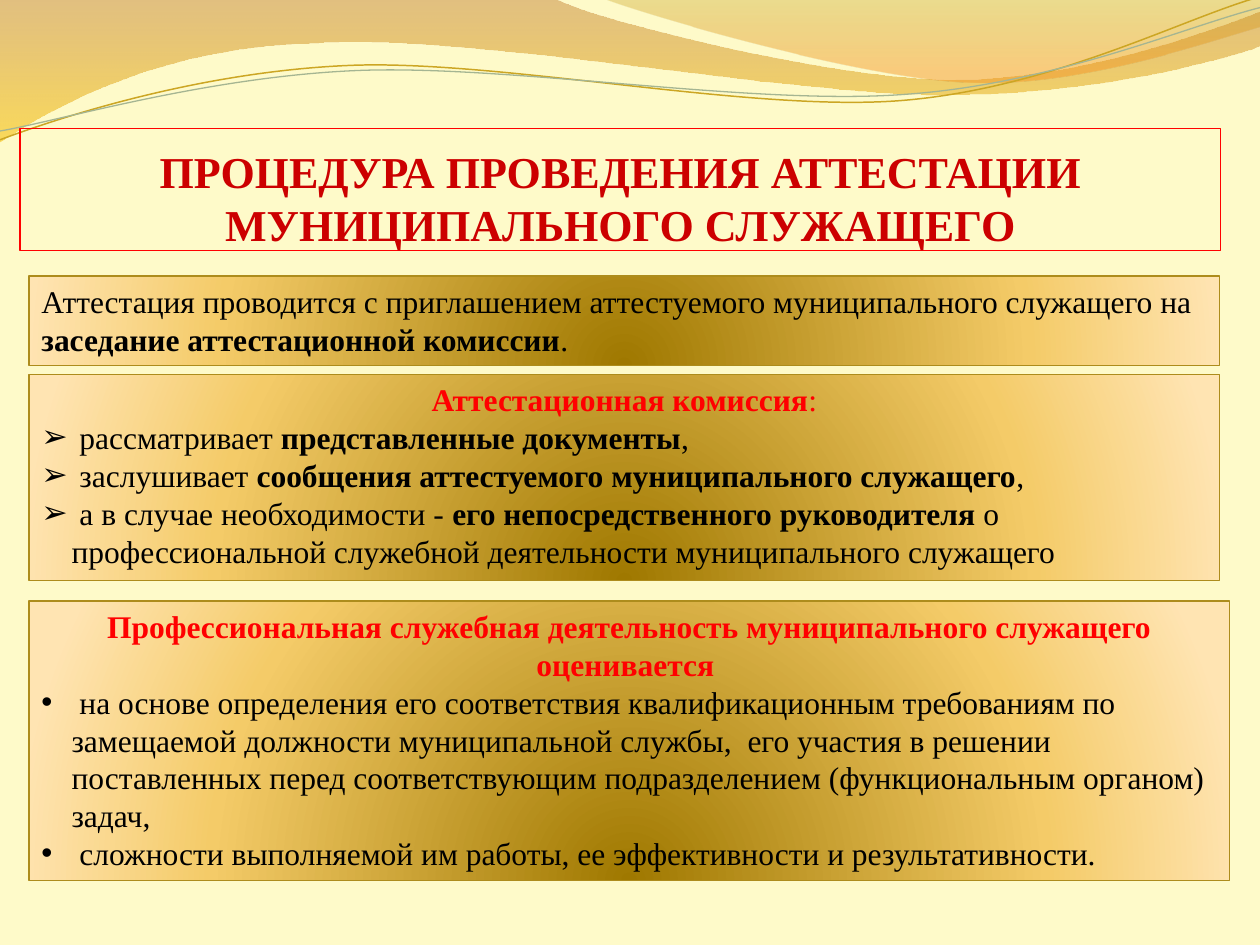
from math import cos, radians, sin

from lxml import etree
from pptx import Presentation
from pptx.dml.color import RGBColor
from pptx.enum.shapes import MSO_SHAPE as Preset
from pptx.enum.text import MSO_ANCHOR as Anchor, PP_ALIGN as Align
from pptx.oxml import parse_xml
from pptx.oxml.ns import nsdecls, qn
from pptx.util import Inches, Pt

COLORS = {
    "background": "FEFAC9", "title": "CC0000", "title_line": "FF0000",
    "heading": "FF0000", "text": "000000", "panel_line": "AD8C1C",
    "gold_line": "CCA624", "green_line": "A5B592",
}
# Gradient stops: position %, colour, opacity %
PANEL_STOPS = [(0, "9F7800", 100), (68, "F4CB68", 100), (100, "FFE4B2", 100)]
PANEL_PATH = ('<a:path path="circle"><a:fillToRect l="50000" t="130000" '
              'r="50000" b="-30000"/></a:path>')
DOWNWARD = '<a:lin ang="5400000" scaled="0"/>'
LINE_ROTATION = 357.3

# A wave is a frame, then a start point followed by segments:
# two numbers for a straight line, six for a cubic curve.
WAVE_FILLS = [
    ((-0.01, -0.01, 10.02, 1.14),
     [(0, 0), (4.4, -0.01), (4.76, 0.17, 6.64, 0.63, 7.58, 0.63),
      (8.53, 0.63, 9.58, 0.26, 10, 0.09), (10.01, 0.36),
      (9.83, 0.44, 8.7, 0.76, 7.46, 0.75), (6.22, 0.75, 3.82, 0.28, 2.57, 0.34),
      (1.29, 0.36, 0.46, 0.83, -0.01, 1.13), (0, 0)],
     [(0, "C07A28", 45), (100, "F7BF00", 55)]),
    ((4.79, -0.01, 5.21, 0.7),
     [(4.79, -0.01), (5.09, 0.11, 6.82, 0.62, 7.69, 0.65),
      (8.56, 0.69, 9.61, 0.32, 10, 0.21), (10, 0), (4.79, -0.01)],
     [(0, "C09709", 30), (80, "F59320", 45)]),
]
WAVE_LINES = [
    ((-0.02, 0.22, 10.02, 0.71),
     [(0, 1.11), (0.48, 0.93, 1.58, 0.57, 2.77, 0.52),
      (3.95, 0.47, 5.93, 0.89, 7.13, 0.8), (8.33, 0.71, 9.38, 0.15, 9.98, -0.02)],
     "gold_line", 0.85),
    ((-0.02, 0.3, 10.03, 0.58),
     [(0, 1.04), (0.47, 0.96, 1.64, 0.61, 2.83, 0.56),
      (4.03, 0.51, 5.97, 0.84, 7.17, 0.75), (8.36, 0.67, 9.41, 0.21, 10, 0.06)],
     "green_line", 0.75),
]

# Paragraph: bullet (None for plain text, "" for a heading), then runs;
# every second run is bold.
PANELS = [
    ((0.23, 2.19, 9.45, 0.71), [
        (None, ["Аттестация проводится с приглашением аттестуемого муниципального служащего на ",
                "заседание аттестационной комиссии", "."]),
    ]),
    ((0.23, 2.97, 9.45, 1.64), [
        ("", ["", "Аттестационная комиссия", ":"]),
        ("➢", [" рассматривает ", "представленные документы", ","]),
        ("➢", [" заслушивает ", "сообщения аттестуемого муниципального служащего", ","]),
        ("➢", [" а в случае необходимости - ", "его непосредственного руководителя",
               " о профессиональной служебной деятельности муниципального служащего"]),
    ]),
    ((0.23, 4.77, 9.53, 2.22), [
        ("", ["", "Профессиональная служебная деятельность муниципального служащего оценивается "]),
        ("•", [" на основе определения его соответствия квалификационным требованиям по "
               "замещаемой должности муниципальной службы,  его участия в решении поставленных "
               "перед соответствующим подразделением (функциональным органом) задач,"]),
        ("•", [" сложности выполняемой им работы, ее эффективности и результативности."]),
    ]),
]


def rgb(name):
    return RGBColor.from_string(COLORS[name])


def set_all(target, values):
    for name, value in values.items():
        setattr(target, name, value)


def to_frame(x, y, frame, rotation):
    """Turn a slide point into an offset within an unrotated frame."""
    left, top, width, height = frame
    dx, dy = x - left - width / 2, y - top - height / 2
    angle = radians(-rotation)
    return (width / 2 + dx * cos(angle) - dy * sin(angle),
            height / 2 + dx * sin(angle) + dy * cos(angle))


class SlideBuilder:
    """Holds the text style and the slide being filled."""

    font_name = "Times New Roman"
    body_size = 18
    bullet_indent = Inches(0.24)

    def __init__(self, slide):
        self.slide = slide
        slide.background.fill.solid()
        slide.background.fill.fore_color.rgb = rgb("background")

    def gradient(self, shape, stops, direction):
        """Fill with a gradient that may be radial or partly transparent."""
        stop_xml = "".join(
            f'<a:gs pos="{pos * 1000}"><a:srgbClr val="{color}">'
            f'<a:alpha val="{opacity * 1000}"/></a:srgbClr></a:gs>'
            for pos, color, opacity in stops)
        shape.fill.background()
        no_fill = shape.fill._xPr.find(qn("a:noFill"))
        no_fill.getparent().replace(no_fill, parse_xml(
            f'<a:gradFill {nsdecls("a")} rotWithShape="1"><a:gsLst>{stop_xml}'
            f'</a:gsLst>{direction}</a:gradFill>'))

    def outline(self, shape, color, width=0.75):
        shape.line.color.rgb = rgb(color)
        shape.line.width = Pt(width)

    def wave(self, frame, wave, rotation=0, close=False):
        """Build a freeform over the frame, then draw the wave's curves in it."""
        left, top, width, height = map(Inches, frame)
        builder = self.slide.shapes.build_freeform(left, top)
        builder.add_line_segments([(left + width, top + height)], close=False)
        shape = builder.convert_to_shape()
        shape.rotation = rotation
        shape.shadow.inherit = False
        outline = next(shape._element.iter(qn("a:path")))
        for step in list(outline):
            outline.remove(step)
        for number, segment in enumerate(wave):
            kind = "cubicBezTo" if len(segment) == 6 else "lnTo" if number else "moveTo"
            step = etree.SubElement(outline, qn(f"a:{kind}"))
            for point in zip(segment[::2], segment[1::2]):
                x, y = map(Inches, to_frame(*point, frame, rotation))
                etree.SubElement(step, qn("a:pt"), x=str(int(x)), y=str(int(y)))
        if close:
            etree.SubElement(outline, qn("a:close"))
        return shape

    def wave_fill(self, frame, wave, stops):
        shape = self.wave(frame, wave, close=True)
        self.gradient(shape, stops, DOWNWARD)
        shape.line.fill.background()

    def wave_line(self, frame, wave, color, width):
        shape = self.wave(frame, wave, LINE_ROTATION)
        shape.fill.background()
        self.outline(shape, color, width)

    def box(self, place, line_color, frame_format):
        shape = self.slide.shapes.add_shape(Preset.RECTANGLE, *map(Inches, place))
        shape.shadow.inherit = False
        shape.fill.background()
        self.outline(shape, line_color)
        set_all(shape.text_frame, {"word_wrap": True, **frame_format})
        return shape

    def run(self, paragraph, text, size, color, bold):
        run = paragraph.add_run()
        run.text = text
        set_all(run.font, {"name": self.font_name, "size": Pt(size), "bold": bold})
        run.font.color.rgb = rgb(color)

    def bullet(self, paragraph, mark):
        properties = paragraph._p.get_or_add_pPr()
        properties.set("marL", str(self.bullet_indent))
        properties.set("indent", str(-self.bullet_indent))
        etree.SubElement(properties, qn("a:buFont"), typeface="Arial")
        etree.SubElement(properties, qn("a:buChar"), char=mark)

    def title(self, place, text):
        frame = self.box(place, "title_line", {
            "vertical_anchor": Anchor.BOTTOM, "margin_left": 0, "margin_right": 0,
            "margin_top": Inches(0.05), "margin_bottom": 0}).text_frame
        frame.paragraphs[0].alignment = Align.CENTER
        self.run(frame.paragraphs[0], text, 25.2, "title", True)

    def panel(self, place, paragraphs):
        shape = self.box(place, "panel_line", {"vertical_anchor": Anchor.TOP})
        self.gradient(shape, PANEL_STOPS, PANEL_PATH)
        frame = shape.text_frame
        for number, (mark, texts) in enumerate(paragraphs):
            paragraph = frame.add_paragraph() if number else frame.paragraphs[0]
            is_heading = mark == ""
            paragraph.alignment = Align.CENTER if is_heading else Align.LEFT
            if mark:
                self.bullet(paragraph, mark)
            for position, text in enumerate(texts):
                if text:
                    self.run(paragraph, text, self.body_size,
                             "heading" if is_heading else "text", position % 2 == 1)


def main():
    deck = Presentation()
    set_all(deck, {"slide_width": Inches(10), "slide_height": Inches(7.5)})
    builder = SlideBuilder(deck.slides.add_slide(deck.slide_layouts[6]))
    for wave in WAVE_FILLS:
        builder.wave_fill(*wave)
    for wave in WAVE_LINES:
        builder.wave_line(*wave)
    builder.title((0.16, 1.02, 9.53, 0.97),
                  "ПРОЦЕДУРА ПРОВЕДЕНИЯ АТТЕСТАЦИИ МУНИЦИПАЛЬНОГО СЛУЖАЩЕГО")
    for panel in PANELS:
        builder.panel(*panel)
    deck.save("out.pptx")


if __name__ == "__main__":
    main()
